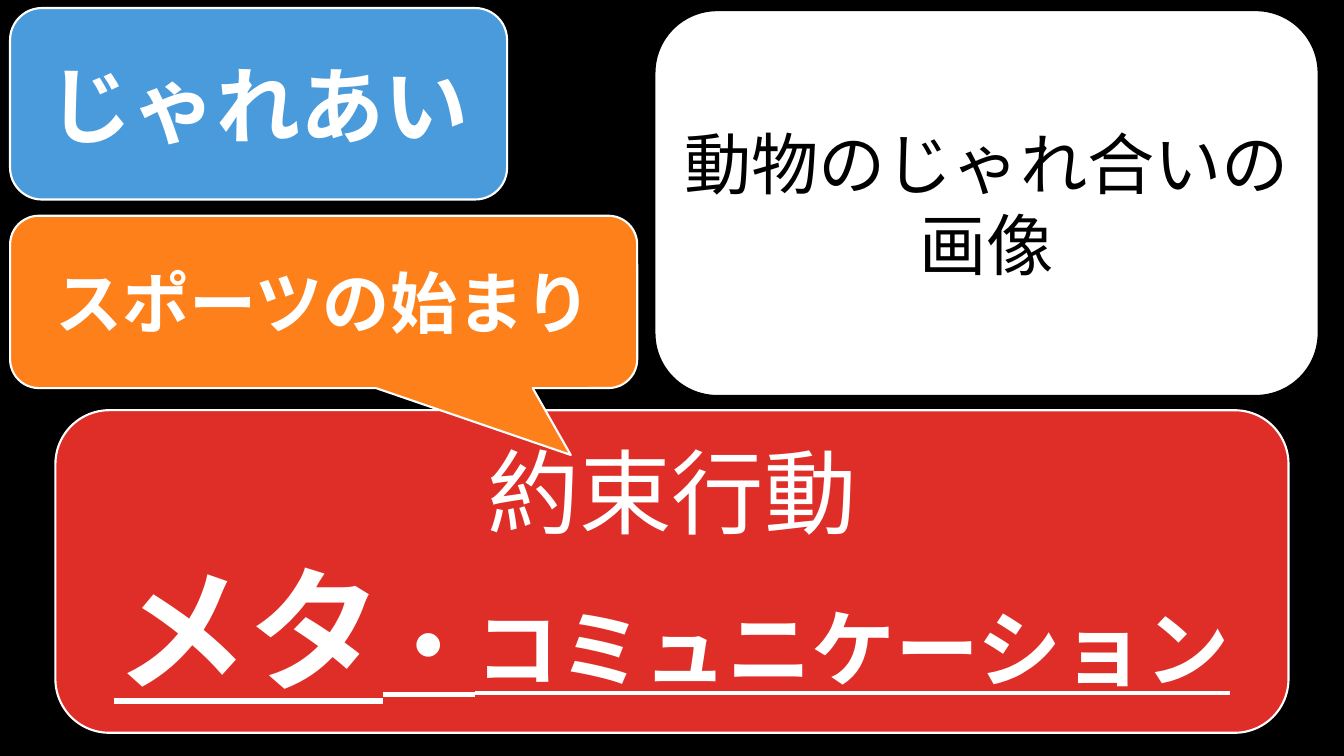
from pptx import Presentation
from pptx.dml.color import RGBColor
from pptx.enum.shapes import MSO_SHAPE
from pptx.enum.text import MSO_ANCHOR, PP_ALIGN
from pptx.util import Inches, Pt

ROUNDED = MSO_SHAPE.ROUNDED_RECTANGLE
CALLOUT = MSO_SHAPE.ROUNDED_RECTANGULAR_CALLOUT
MIDDLE, CENTER = MSO_ANCHOR.MIDDLE, PP_ALIGN.CENTER

BLACK = RGBColor(0x00, 0x00, 0x00)
WHITE = RGBColor(0xFF, 0xFF, 0xFF)
RED = RGBColor(0xDF, 0x2E, 0x28)
BLUE = RGBColor(0x4A, 0x9B, 0xDC)
ORANGE = RGBColor(0xFE, 0x80, 0x1A)
FONT = "Calibri"

# Content, back to front; each line is (bold, underline, [(text, size), ...])
PANELS = [
    dict(box=(0.55, 4.07, 12.23, 3.2), kind=ROUNDED, fill=RED, ink=WHITE,
         border=(WHITE, 1.5),
         lines=[(False, False, [("約束行動", 66)]),
                (True, True, [("メタ", 96), ("・", 66), ("コミュニケーション", 60)])]),
    dict(box=(0.1, 0.08, 4.93, 1.9), kind=ROUNDED, fill=BLUE, ink=WHITE,
         border=(WHITE, 1.5), lines=[(True, False, [("じゃれあい", 60)])]),
    dict(box=(0.1, 2.14, 6.22, 1.71), kind=CALLOUT, fill=ORANGE, ink=WHITE,
         border=(WHITE, 1.5), tail=(0.394, 0.888, 0.167),
         lines=[(True, False, [("スポーツの始まり", 48)])]),
    dict(box=(6.47, 0.08, 6.63, 3.87), kind=ROUNDED, fill=WHITE, ink=BLACK,
         border=(BLACK, 4.5), lines=[(False, False, [("動物のじゃれ合いの画像", 48)])]),
]


def write_line(paragraph, line, ink):
    bold, underline, pieces = line
    paragraph.alignment = CENTER
    font = paragraph.font
    font.name, font.bold, font.underline = FONT, bold, underline
    font.color.rgb = ink
    for text, size in pieces:
        run = paragraph.add_run()
        run.text = text
        run.font.size = Pt(size)


def add_panel(slide, panel):
    shape = slide.shapes.add_shape(panel["kind"], *map(Inches, panel["box"]))
    shape.shadow.inherit = False
    for index, value in enumerate(panel.get("tail", ())):
        shape.adjustments[index] = value
    shape.fill.solid()
    shape.fill.fore_color.rgb = panel["fill"]
    color, width = panel["border"]
    shape.line.color.rgb = color
    shape.line.width = Pt(width)

    frame = shape.text_frame
    frame.word_wrap = True
    frame.vertical_anchor = MIDDLE
    for index, line in enumerate(panel["lines"]):
        paragraph = frame.add_paragraph() if index else frame.paragraphs[0]
        write_line(paragraph, line, panel["ink"])


def main():
    prs = Presentation()
    prs.slide_width, prs.slide_height = Inches(13.33), Inches(7.5)
    slide = prs.slides.add_slide(prs.slide_layouts[6])

    # Black backdrop
    slide.background.fill.solid()
    slide.background.fill.fore_color.rgb = BLACK

    # Text panels
    for panel in PANELS:
        add_panel(slide, panel)

    prs.save("out.pptx")


if __name__ == "__main__":
    main()
